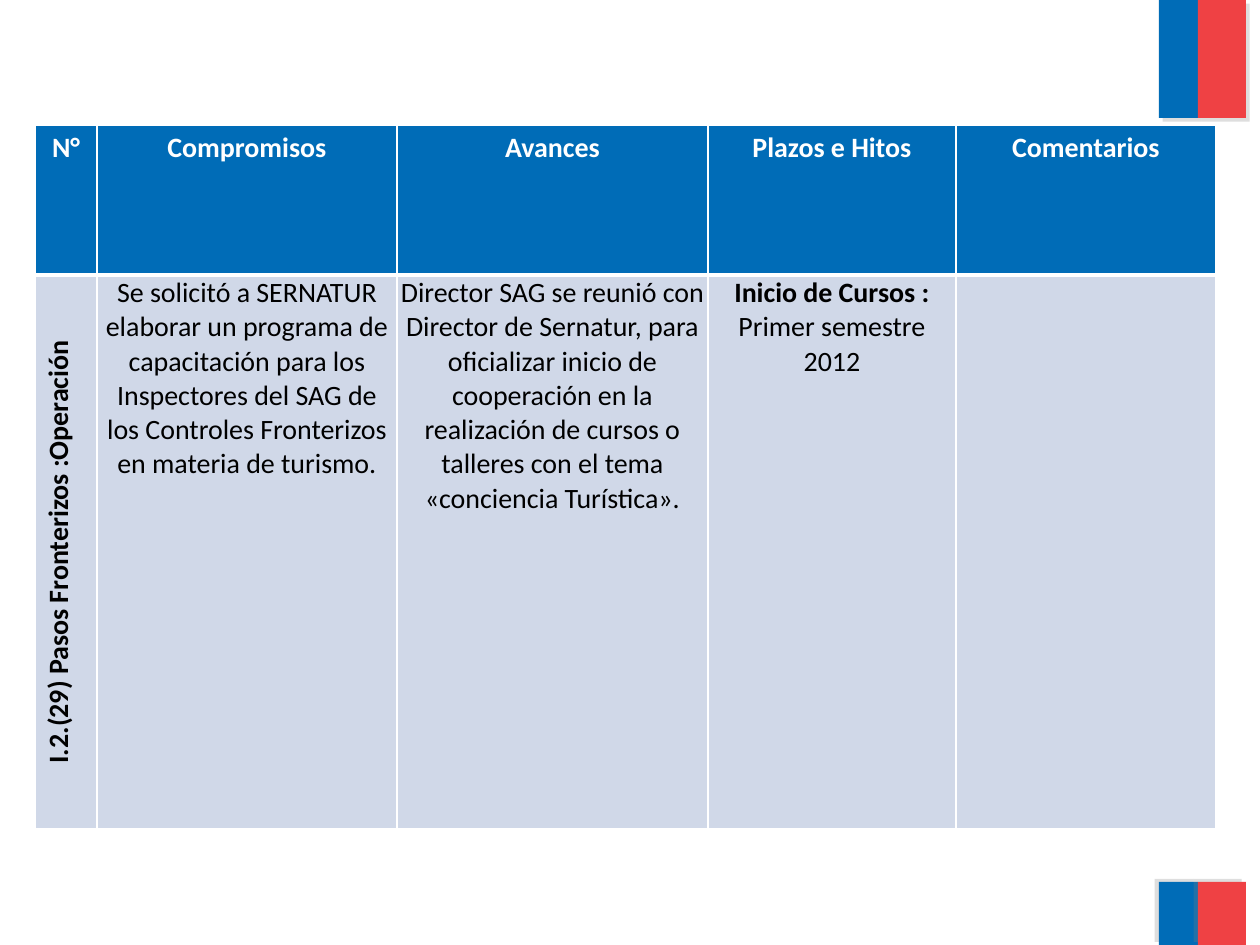
from lxml import etree
from pptx import Presentation
from pptx.dml.color import RGBColor
from pptx.enum.shapes import MSO_SHAPE
from pptx.enum.text import PP_ALIGN
from pptx.oxml import parse_xml
from pptx.oxml.ns import nsdecls, qn
from pptx.util import Pt

EMU_PER_PX = 914400 / 126
BLUE = RGBColor(0x00, 0x6C, 0xB7)
RED = RGBColor(0xEF, 0x41, 0x44)
PALE = RGBColor(0xD0, 0xD8, 0xE8)
WHITE = RGBColor(0xFF, 0xFF, 0xFF)
BLACK = RGBColor(0x00, 0x00, 0x00)
GRAY = RGBColor(0x80, 0x80, 0x80)

COLS = [62, 300, 311, 248, 260]
ROWS = [150, 554]
HEADERS = ["N°", "Compromisos", "Avances", "Plazos e Hitos", "Comentarios"]
# Each body cell is a list of (text, bold) runs.
BODY = [
    [("I.2.(29) Pasos Fronterizos :Operación", True)],
    [("Se solicitó a SERNATUR elaborar un programa de capacitación para los "
      "Inspectores del SAG de los Controles Fronterizos en materia de turismo.", False)],
    [("Director SAG se reunió con Director de Sernatur, para oficializar inicio de "
      "cooperación en la realización de cursos o talleres con el tema "
      "«conciencia Turística».", False)],
    [("Inicio de Cursos :", True), (" Primer semestre 2012", False)],
    [],
]


def px(n):
    return round(n * EMU_PER_PX)


def add_shadow(s, angle):
    s._element.spPr.append(parse_xml(
        f'<a:effectLst {nsdecls("a")}>'
        f'<a:outerShdw blurRad="0" dist="{Pt(3)}" dir="{angle * 60000}" algn="ctr" rotWithShape="0">'
        f'<a:srgbClr val="{GRAY}"><a:alpha val="25000"/></a:srgbClr>'
        '</a:outerShdw></a:effectLst>'))


def add_flag(slide, y, height, angle):
    """Draw a blue and a red bar side by side, with shadows cast at angle."""
    for x, width, color in ((1159, 39, BLUE), (1198, 48, RED)):
        s = slide.shapes.add_shape(MSO_SHAPE.RECTANGLE, px(x), px(y), px(width), px(height))
        s.fill.solid()
        s.fill.fore_color.rgb = color
        s.line.fill.background()
        add_shadow(s, angle)


def set_borders(cell, bottom):
    tcPr = cell._tc.get_or_add_tcPr()
    for i, (side, width) in enumerate((("L", 1), ("R", 1), ("T", 1), ("B", bottom))):
        ln = etree.Element(qn(f"a:ln{side}"), w=str(Pt(width)))
        fill = etree.SubElement(ln, qn("a:solidFill"))
        etree.SubElement(fill, qn("a:srgbClr"), val=str(WHITE))
        tcPr.insert(i, ln)


def fill_cell(cell, runs, fill, color, bottom=1):
    cell.fill.solid()
    cell.fill.fore_color.rgb = fill
    set_borders(cell, bottom)
    p = cell.text_frame.paragraphs[0]
    p.alignment = PP_ALIGN.CENTER
    for text, bold in runs:
        r = p.add_run()
        r.text = text
        r.font.name = "Calibri"
        r.font.size = Pt(16)
        r.font.bold = bold
        r.font.color.rgb = color


def add_commitments_table(slide):
    frame = slide.shapes.add_table(len(ROWS), len(COLS), px(35), px(125),
                                   px(sum(COLS)), px(sum(ROWS)))
    table = frame.table
    for column, width in zip(table.columns, COLS):
        column.width = px(width)
    for row, height in zip(table.rows, ROWS):
        row.height = px(height)
    for i, (header, runs) in enumerate(zip(HEADERS, BODY)):
        fill_cell(table.cell(0, i), [(header, True)], BLUE, WHITE, bottom=3)
        cell = table.cell(1, i)
        fill_cell(cell, runs, PALE, BLACK)
        if i == 0:
            cell._tc.tcPr.set("vert", "vert270")
        elif runs:
            cell.margin_left = cell.margin_right = cell.margin_top = px(1)
            cell.margin_bottom = 0


def main():
    prs = Presentation()
    prs.slide_width, prs.slide_height = px(1260), px(945)
    slide = prs.slides.add_slide(prs.slide_layouts[6])
    add_flag(slide, 0, 118, 45)
    add_flag(slide, 882, 63, 215)
    add_commitments_table(slide)
    prs.save("out.pptx")


if __name__ == "__main__":
    main()
